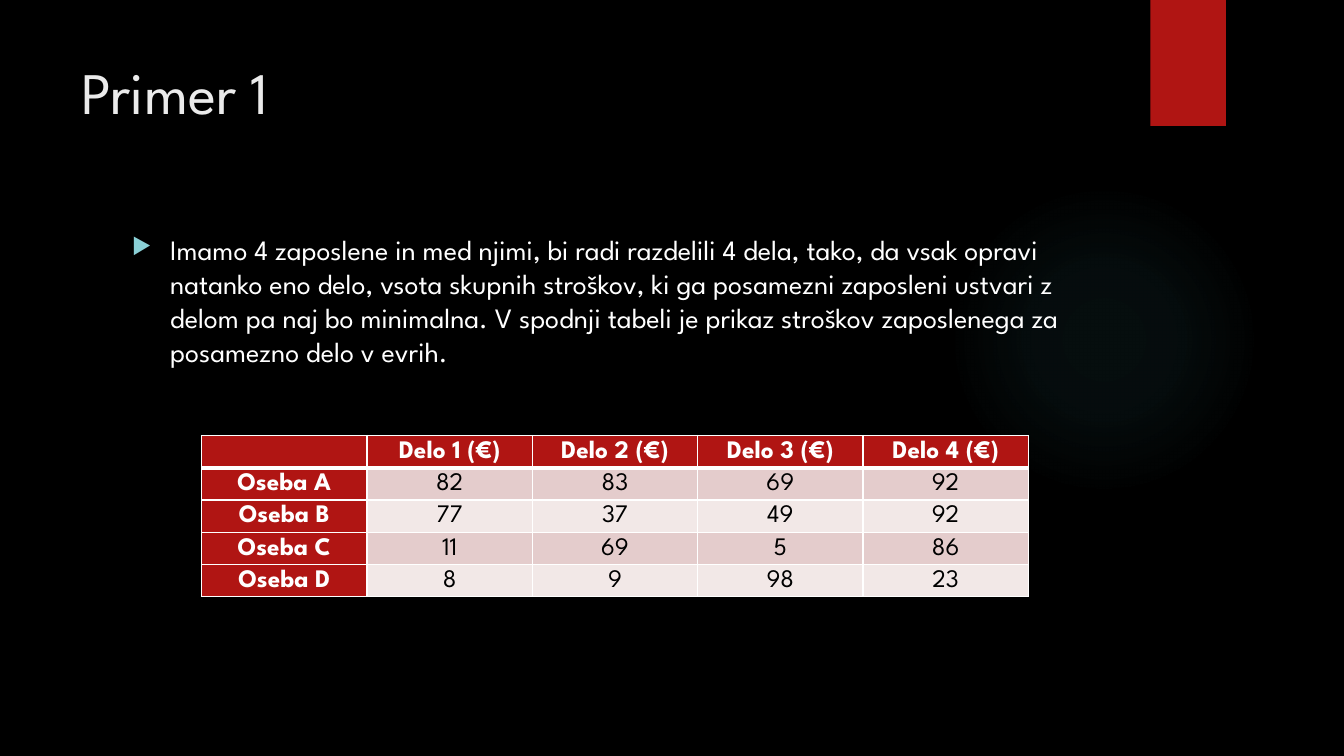
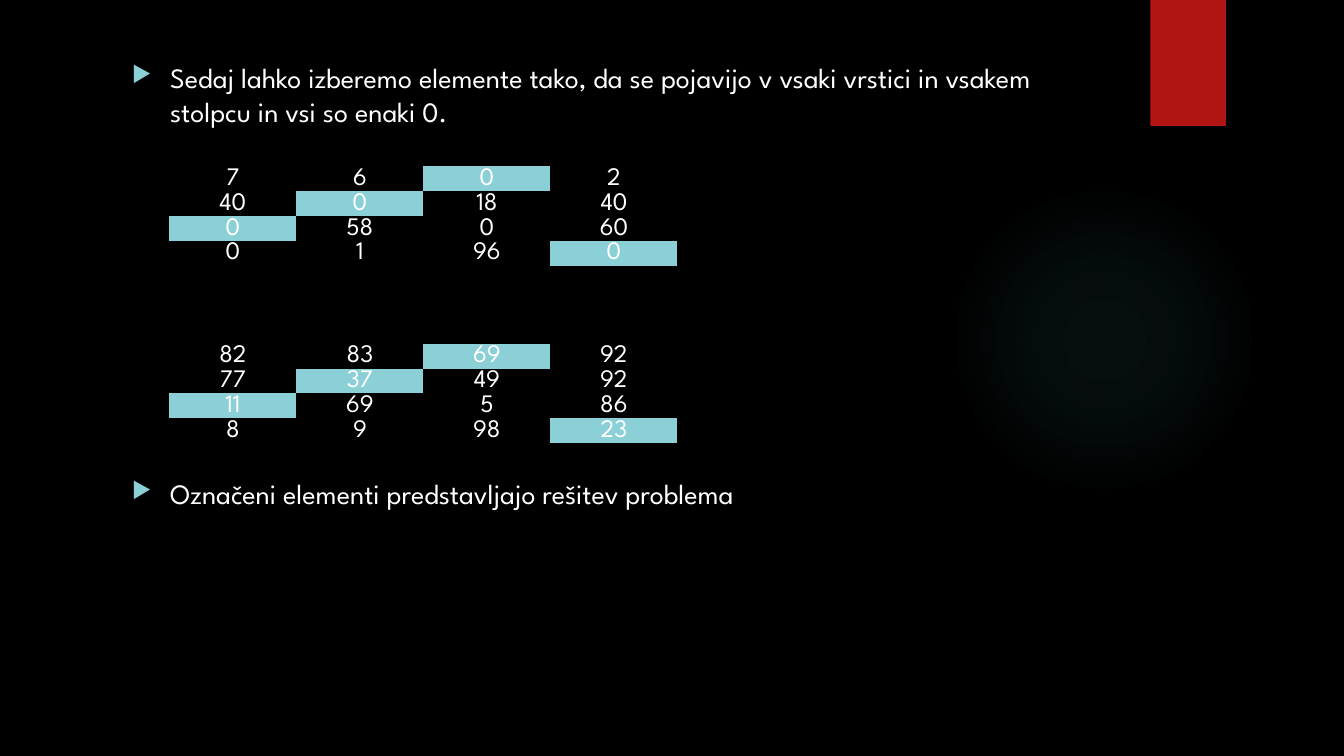
from lxml.etree import SubElement as Sub
from pptx import Presentation
from pptx.dml.color import RGBColor
from pptx.enum.shapes import MSO_SHAPE as Kind
from pptx.enum.text import MSO_ANCHOR as Anchor, PP_ALIGN as Align
from pptx.oxml.ns import qn
from pptx.util import Inches, Pt

FONT = "League Spartan"
BLACK = RGBColor(0x00, 0x00, 0x00)
WHITE = RGBColor(0xFF, 0xFF, 0xFF)
PALE = RGBColor(0xEB, 0xEB, 0xEB)
RED = RGBColor(0xB0, 0x15, 0x13)
ROSE = RGBColor(0xE4, 0xCC, 0xCC)
BLUSH = RGBColor(0xF2, 0xE8, 0xE7)
AQUA = RGBColor(0x8A, 0xD0, 0xD6)
TEAL = RGBColor(0x50, 0xB9, 0xC1)
GLOW = [(0, 7), (36, 6), (69, 0)]
PLAIN = "{2D5ABB26-0587-4C30-8999-92F81FD0307C}"

TITLE = "Primer 1"
TASK = (
    "Imamo 4 zaposlene in med njimi, bi radi razdelili 4 dela, tako, da vsak opravi "
    "natanko eno delo, vsota skupnih stroškov, ki ga posamezni zaposleni ustvari z "
    "delom pa naj bo minimalna. V spodnji tabeli je prikaz stroškov zaposlenega za "
    "posamezno delo v evrih."
)
NOTES = [
    "Sedaj lahko izberemo elemente tako, da se pojavijo v vsaki vrstici in vsakem "
    "stolpcu in vsi so enaki 0.",
    "Označeni elementi predstavljajo rešitev problema",
]
JOBS = ["Delo 1 (€)", "Delo 2 (€)", "Delo 3 (€)", "Delo 4 (€)"]
STAFF = ["Oseba A", "Oseba B", "Oseba C", "Oseba D"]
COSTS = [[82, 83, 69, 92], [77, 37, 49, 92], [11, 69, 5, 86], [8, 9, 98, 23]]
ZEROS = [[7, 6, 0, 2], [40, 0, 18, 40], [0, 58, 0, 60], [0, 1, 96, 0]]
PICKS = [2, 1, 0, 3]


def style(para, size, color, line, bold=False):
    para.line_spacing = Pt(line)
    font = para.font
    font.name, font.size, font.bold = FONT, Pt(size), bold
    font.color.rgb = color


def add_shape(slide, kind, box):
    shape = slide.shapes.add_shape(kind, *map(Inches, box))
    shape.shadow.inherit = False
    shape.line.fill.background()
    return shape


def add_glow(slide):
    shape = add_shape(slide, Kind.OVAL, (9.41, 1.83, 3.08, 3.08))
    grad = shape.fill
    grad.gradient()
    node = shape._element.spPr.find(qn("a:gradFill"))
    for child in list(node):
        node.remove(child)
    stops = Sub(node, qn("a:gsLst"))
    for pos, alpha in GLOW:
        stop = Sub(stops, qn("a:gs"), pos=str(pos * 1000))
        color = Sub(stop, qn("a:srgbClr"), val=str(TEAL))
        Sub(color, qn("a:alpha"), val=str(alpha * 1000))
    way = Sub(node, qn("a:path"), {"path": "circle"})
    Sub(way, qn("a:fillToRect"), {side: "50000" for side in "ltrb"})


def add_slide(deck):
    slide = deck.slides.add_slide(deck.slide_layouts[6])
    back = slide.background.fill
    back.solid()
    back.fore_color.rgb = BLACK
    add_glow(slide)
    flag = add_shape(slide, Kind.RECTANGLE, (11.41, 0, 0.75, 1.25))
    flag.fill.solid()
    flag.fill.fore_color.rgb = RED
    return slide


def add_text(slide, box):
    frame = slide.shapes.add_textbox(*map(Inches, box)).text_frame
    frame.word_wrap = True
    return frame


def add_list(slide, top, high, items, gap=0):
    frame = add_text(slide, (1.21, top, 9.78, high))
    for i, item in enumerate(items):
        para = frame.add_paragraph() if i else frame.paragraphs[0]
        para.text = item
        if i:
            para.space_before = Pt(gap)
        props = para._p.get_or_add_pPr()
        props.set("marL", str(Inches(0.38)))
        props.set("indent", str(-Inches(0.38)))
        tint = Sub(props, qn("a:buClr"))
        Sub(tint, qn("a:srgbClr"), val=str(AQUA))
        Sub(props, qn("a:buSzPct"), val="80000")
        Sub(props, qn("a:buChar"), char="▶")
        style(para, 20, WHITE, 24.3)


def add_edges(cell, head):
    props = cell._tc.get_or_add_tcPr()
    for side in "LRTB":
        width = Pt(3 if head and side == "B" else 1)
        edge = Sub(props, qn("a:ln" + side), w=str(width))
        fill = Sub(edge, qn("a:solidFill"))
        Sub(fill, qn("a:srgbClr"), val=str(WHITE))


def add_grid(slide, spot, wide, high, rows, look, edged=False):
    count, span = len(rows), len(rows[0])
    box = (*spot, wide * span, high * count)
    table = slide.shapes.add_table(count, span, *map(Inches, box)).table
    table.first_row = table.horz_banding = False
    table._tbl.tblPr.find(qn("a:tableStyleId")).text = PLAIN
    for r, row in enumerate(rows):
        table.rows[r].height = Inches(high)
        for c, value in enumerate(row):
            cell = table.cell(r, c)
            fill, color, bold = look(r, c)
            cell.vertical_anchor = Anchor.MIDDLE
            cell.margin_left = cell.margin_right = Inches(0.07)
            cell.margin_top = cell.margin_bottom = 0
            if edged:
                add_edges(cell, r == 0)
            if fill is None:
                cell.fill.background()
            else:
                cell.fill.solid()
                cell.fill.fore_color.rgb = fill
            para = cell.text_frame.paragraphs[0]
            para.text = str(value)
            para.alignment = Align.CENTER
            style(para, 18, color, 17.7, bold)


def cost_look(r, c):
    if r == 0 or c == 0:
        return RED, WHITE, True
    return (ROSE if r % 2 else BLUSH), BLACK, False


def pick_look(r, c):
    return (AQUA if PICKS[r] == c else None), WHITE, False


def main():
    deck = Presentation()
    deck.slide_width, deck.slide_height = Inches(13.33), Inches(7.5)

    slide = add_slide(deck)
    para = add_text(slide, (0.71, 0.5, 10.29, 1.53)).paragraphs[0]
    para.text = TITLE
    style(para, 42, PALE, 51)
    add_list(slide, 2.25, 4.59, [TASK])
    rows = [["", *JOBS]] + [[name, *row] for name, row in zip(STAFF, COSTS)]
    add_grid(slide, (2, 4.32), 1.64, 0.32, rows, cost_look, edged=True)

    slide = add_slide(deck)
    add_list(slide, 0.55, 6.28, NOTES, gap=248)
    for top, rows in ((1.65, ZEROS), (3.41, COSTS)):
        add_grid(slide, (1.68, top), 1.26, 0.24, rows, pick_look)

    deck.save("out.pptx")


if __name__ == "__main__":
    main()
